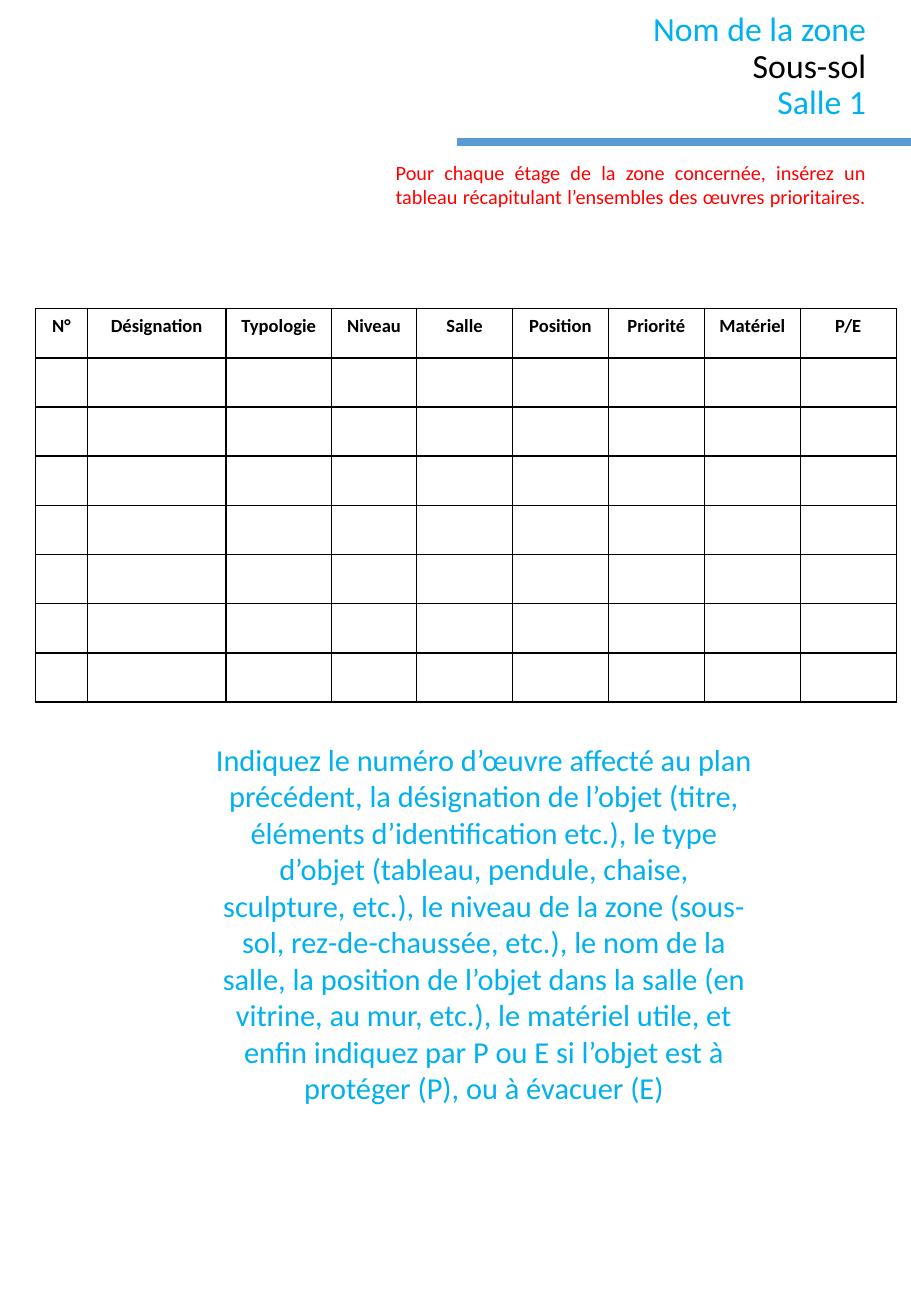
from lxml.etree import SubElement
from pptx import Presentation
from pptx.dml.color import RGBColor
from pptx.enum.shapes import MSO_CONNECTOR
from pptx.enum.text import MSO_ANCHOR, PP_ALIGN
from pptx.oxml.ns import qn
from pptx.util import Inches, Pt

FONT = "Calibri"
BLACK, CYAN, RED, BLUE, WHITE = "000000", "00B0F0", "FF0000", "5B9BD5", "FFFFFF"
HEADS = ["N°", "Désignation", "Typologie", "Niveau", "Salle",
         "Position", "Priorité", "Matériel", "P/E"]
WIDTHS = [0.43, 1.14, 0.87, 0.7] + [0.79] * 5
ROWS, ROW_H = 8, 0.405
NOTE = ("Pour chaque étage de la zone concernée, insérez un tableau "
        "récapitulant l’ensembles des œuvres prioritaires. ")
GUIDE = ("Indiquez le numéro d’œuvre affecté au plan précédent, la désignation "
         "de l’objet (titre, éléments d’identification etc.), le type d’objet "
         "(tableau, pendule, chaise, sculpture, etc.), le niveau de la zone "
         "(sous-sol, rez-de-chaussée, etc.), le nom de la salle, la position de "
         "l’objet dans la salle (en vitrine, au mur, etc.), le matériel utile, "
         "et enfin indiquez par P ou E si l’objet est à protéger (P), ou à "
         "évacuer (E)")


def color(code):
    return RGBColor.from_string(code)


def add_run(para, text, size, code, bold=False):
    run = para.add_run()
    run.text = text
    font = run.font
    font.name, font.size, font.bold = FONT, Pt(size), bold
    font.color.rgb = color(code)


def add_text(slide, box, lines, size, align, anchor=MSO_ANCHOR.TOP, spacing=None):
    """Write (text, colour) lines as one paragraph with line breaks."""
    frame = slide.shapes.add_textbox(*map(Inches, box)).text_frame
    frame.word_wrap = True
    frame.vertical_anchor = anchor
    para = frame.paragraphs[0]
    para.alignment = align
    para.line_spacing = spacing
    for i, (text, code) in enumerate(lines):
        if i:
            para.add_line_break()
        add_run(para, text, size, code)


def add_rule(slide, start, end, code, width):
    line = slide.shapes.add_connector(
        MSO_CONNECTOR.STRAIGHT, *map(Inches, start + end))
    line.line.color.rgb = color(code)
    line.line.width = Pt(width)
    SubElement(line._element.spPr, qn("a:effectLst"))


def add_borders(cell, code, width):
    props = cell._tc.get_or_add_tcPr()
    for i, side in enumerate(("a:lnL", "a:lnR", "a:lnT", "a:lnB")):
        edge = props.makeelement(qn(side), {"w": str(Pt(width))})
        fill = SubElement(edge, qn("a:solidFill"))
        SubElement(fill, qn("a:srgbClr"), val=code)
        props.insert(i, edge)


def add_grid(slide, left, top):
    table = slide.shapes.add_table(
        ROWS, len(HEADS), Inches(left), Inches(top),
        Inches(sum(WIDTHS)), Inches(ROWS * ROW_H)).table
    table.horz_banding = False
    for col, width in zip(table.columns, WIDTHS):
        col.width = Inches(width)
    for row in table.rows:
        row.height = Inches(ROW_H)
    for cell in table.iter_cells():
        cell.fill.solid()
        cell.fill.fore_color.rgb = color(WHITE)
        add_borders(cell, BLACK, 1)
    for cell, head in zip(table.rows[0].cells, HEADS):
        cell.margin_left = cell.margin_right = Inches(0.05)
        para = cell.text_frame.paragraphs[0]
        para.alignment = PP_ALIGN.CENTER
        add_run(para, head, 11, BLACK, bold=True)


def main():
    deck = Presentation()
    deck.slide_width, deck.slide_height = Inches(7.5), Inches(10.83)
    slide = deck.slides.add_slide(deck.slide_layouts[6])
    title = [("Nom de la zone", CYAN), ("Sous-sol", BLACK), ("Salle 1", CYAN)]
    add_text(slide, (5.03, 0.03, 2.2, 1.05), title, 20, PP_ALIGN.RIGHT,
             MSO_ANCHOR.MIDDLE, 0.9)
    add_rule(slide, (7.5, 1.17), (3.76, 1.17), BLUE, 4.75)
    add_text(slide, (3.16, 1.27, 4.07, 0.91), [(NOTE, RED)], 12, PP_ALIGN.JUSTIFY)
    add_grid(slide, 0.29, 2.54)
    add_text(slide, (1.67, 6.05, 4.63, 3.13), [(GUIDE, CYAN)], 18, PP_ALIGN.CENTER)
    deck.save("out.pptx")


if __name__ == "__main__":
    main()
